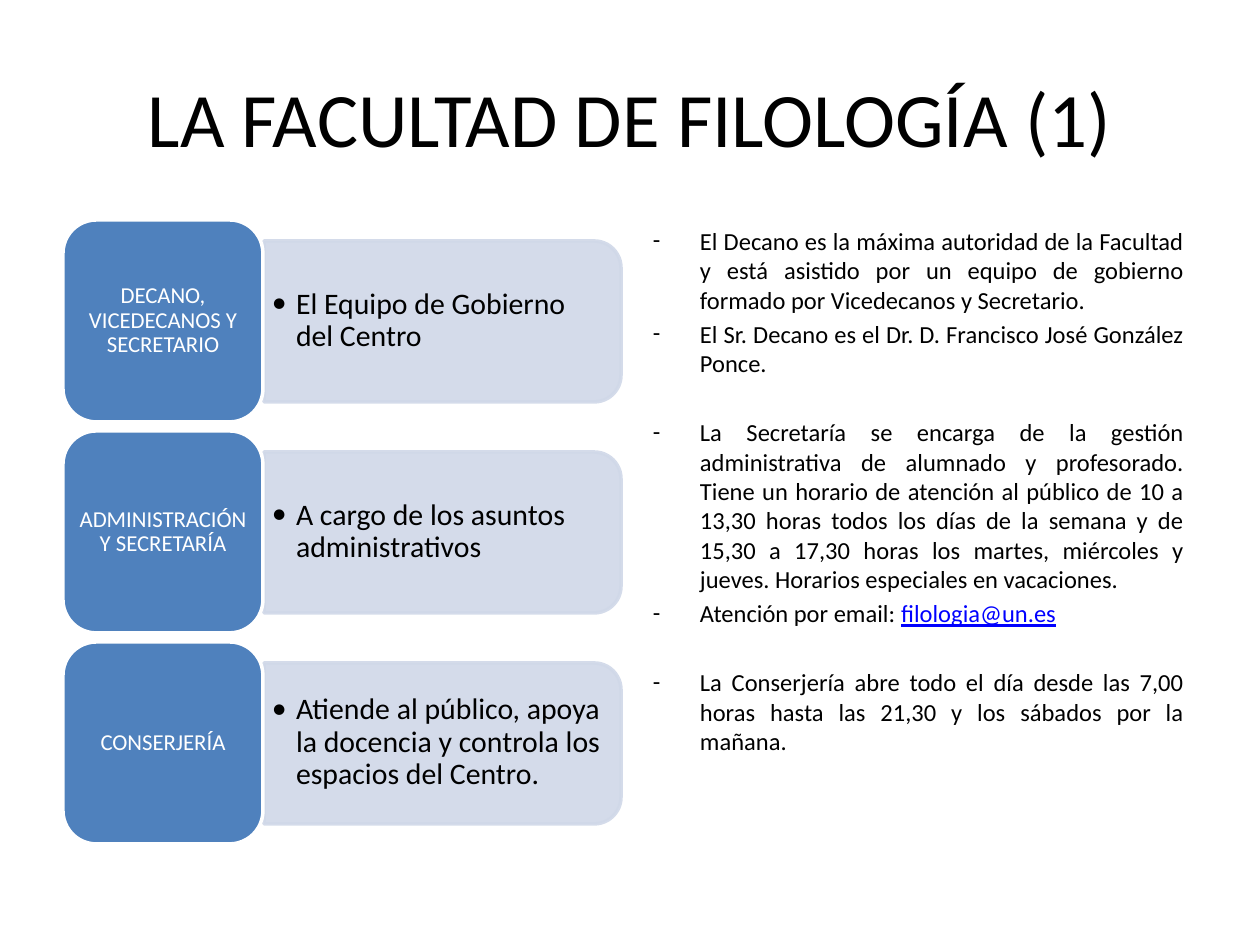
from dataclasses import dataclass

from lxml import etree
from pptx import Presentation
from pptx import util as u
from pptx.dml.color import RGBColor
from pptx.enum import shapes, text
from pptx.oxml.ns import qn

PX = 914400 / 126  # EMU per px


@dataclass(frozen=True)
class Theme:
    font: str = "Calibri"
    ink: str = "000000"
    white: str = "FFFFFF"
    tile: str = "4F81BD"
    panel: str = "D0D8E8"
    link: str = "0000FF"
    title_pt: int = 44
    panel_pt: int = 17
    tile_pt: int = 13
    body_pt: int = 14


T = Theme()
ALIGN, ANCHOR = text.PP_ALIGN, text.MSO_ANCHOR
SHAPE = shapes.MSO_SHAPE

# Short space inside a topic, long space between topics (points)
NEAR, FAR = 2.6, 22.6

CARDS = [
    ("DECANO, VICEDECANOS Y SECRETARIO", "El Equipo de Gobierno del Centro"),
    ("ADMINISTRACIÓN Y SECRETARÍA", "A cargo de los asuntos administrativos"),
    ("CONSERJERÍA", "Atiende al público, apoya la docencia y controla "
     "los espacios del Centro."),
]
NOTES = [
    (NEAR, "El Decano es la máxima autoridad de la Facultad y está asistido "
     "por un equipo de gobierno formado por Vicedecanos y Secretario.", ""),
    (NEAR, "El Sr. Decano es el Dr. D. Francisco José González Ponce.", ""),
    (FAR, "La Secretaría se encarga de la gestión administrativa de alumnado "
     "y profesorado. Tiene un horario de atención al público de 10 a 13,30 "
     "horas todos los días de la semana y de 15,30 a 17,30 horas los martes, "
     "miércoles y jueves. Horarios especiales en vacaciones.", ""),
    (NEAR, "Atención por email: ", "filologia@un.es"),
    (FAR, "La Conserjería abre todo el día desde las 7,00 horas hasta las "
     "21,30 y los sábados por la mañana.", ""),
]


def px(n):
    return u.Emu(round(n * PX))


def rgb(code):
    return RGBColor.from_string(code)


def assign(obj, values):
    for name, value in values.items():
        setattr(obj, name, value)


def set_frame(sp, anchor, dx, dy):
    tf = sp.text_frame
    assign(tf, dict(word_wrap=True, vertical_anchor=anchor,
                    margin_left=px(dx), margin_right=px(dx),
                    margin_top=px(dy), margin_bottom=px(dy)))
    return tf


def add_textbox(s, box, anchor, dx=13, dy=6):
    return set_frame(s.shapes.add_textbox(*map(px, box)), anchor, dx, dy)


def add_run(p, words, size, color, **font):
    r = p.add_run()
    r.text = words
    assign(r.font, dict(name=T.font, size=u.Pt(size), **font))
    r.font.color.rgb = rgb(color)


def add_bullet(p, char, indent):
    pPr = p._p.get_or_add_pPr()
    pPr.set("marL", str(px(indent)))
    pPr.set("indent", str(-px(indent)))
    etree.SubElement(pPr, qn("a:buFont")).set("typeface", T.font)
    etree.SubElement(pPr, qn("a:buChar")).set("char", char)


def add_block(s, kind, box, fill, line):
    sp = s.shapes.add_shape(kind, *map(px, box))
    sp.shadow.inherit = False
    sp.fill.solid()
    sp.fill.fore_color.rgb = rgb(fill)
    sp.line.color.rgb = rgb(line)
    sp.line.width = u.Pt(2)
    return sp


def set_alpha(sp, percent):
    for color in sp._element.spPr.iter(qn("a:srgbClr")):
        etree.SubElement(color, qn("a:alpha")).set("val", str(percent * 1000))


def add_title(s, words):
    p = add_textbox(s, (63, 38, 1134, 158), ANCHOR.MIDDLE).paragraphs[0]
    p.alignment = ALIGN.CENTER
    add_run(p, words, T.title_pt, T.ink)


def add_card(s, top, label, detail):
    # Panel, a quarter turn so that its rounded end points right
    w, h = 161, 357
    panel = add_block(s, SHAPE.ROUND_2_SAME_RECTANGLE,
                      (264 + (h - w) // 2, top + 101 - h // 2, w, h),
                      T.panel, T.panel)
    panel.rotation = 90
    set_alpha(panel, 90)

    # Upright text over the panel
    p = add_textbox(s, (263, top + 28, 348, 145), ANCHOR.MIDDLE,
                    9, 5).paragraphs[0]
    assign(p, dict(alignment=ALIGN.LEFT, line_spacing=0.9))
    add_bullet(p, "•", 24)
    add_run(p, detail, T.panel_pt, T.ink)

    # Label tile
    tile = add_block(s, SHAPE.ROUNDED_RECTANGLE, (63, top, 200, 202),
                     T.tile, T.white)
    p = set_frame(tile, ANCHOR.MIDDLE, 6, 4).paragraphs[0]
    assign(p, dict(alignment=ALIGN.CENTER, line_spacing=0.9))
    add_run(p, label, T.tile_pt, T.white)


def add_notes(s, notes):
    tf = add_textbox(s, (640, 220, 557, 669), ANCHOR.TOP)
    for i, (gap, words, address) in enumerate(notes):
        p = tf.add_paragraph() if i else tf.paragraphs[0]
        assign(p, dict(alignment=ALIGN.JUSTIFY, space_before=u.Pt(gap)))
        add_bullet(p, "-", 47)
        add_run(p, words, T.body_pt, T.ink)
        if address:
            add_run(p, address, T.body_pt, T.link, underline=True)


def main():
    prs = Presentation()
    assign(prs, dict(slide_width=px(1260), slide_height=px(945)))
    s = prs.slides.add_slide(prs.slide_layouts[6])
    add_title(s, "LA FACULTAD DE FILOLOGÍA (1)")
    for i, (label, detail) in enumerate(CARDS):
        add_card(s, 220 + 211 * i, label, detail)
    add_notes(s, NOTES)
    prs.save("out.pptx")


if __name__ == "__main__":
    main()
